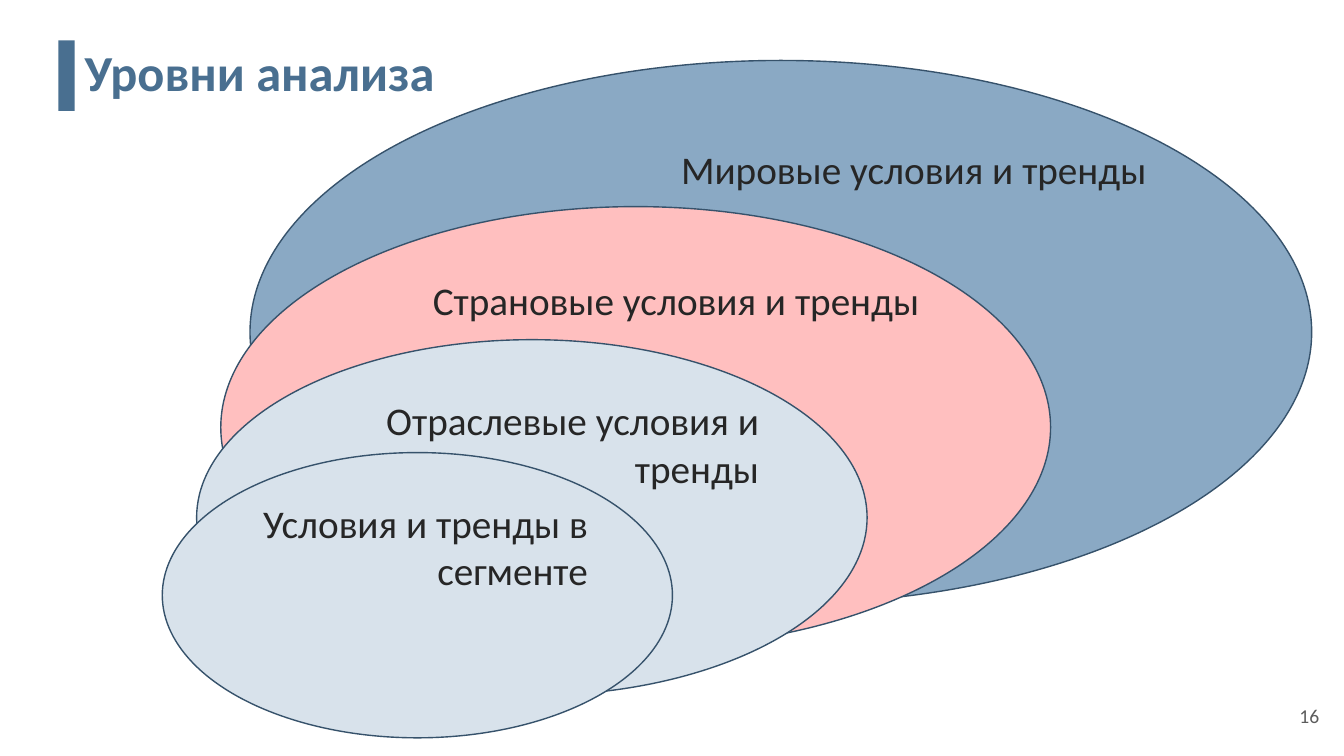
"""Builds the slide showing nested levels of market analysis."""
from dataclasses import dataclass

from pptx import Presentation
from pptx.dml.color import RGBColor
from pptx.enum.shapes import MSO_SHAPE
from pptx.enum.text import MSO_ANCHOR, PP_ALIGN
from pptx.util import Emu, Pt

EMU_PER_PX = 9144
ELLIPSE, RECT = MSO_SHAPE.OVAL, MSO_SHAPE.RECTANGLE
TOP, MIDDLE = MSO_ANCHOR.TOP, MSO_ANCHOR.MIDDLE
LEFT, RIGHT = PP_ALIGN.LEFT, PP_ALIGN.RIGHT
FONT = "Calibri"
COLORS = {
    "accent": "496F90",
    "outline": "36526B",
    "text": "262626",
    "number": "5C5C5C",
    "world": "8AA9C4",
    "country": "FFBFBF",
    "pale": "D8E2EB",
}


@dataclass(frozen=True)
class Box:
    left: int
    top: int
    width: int
    height: int


@dataclass(frozen=True)
class Level:
    text: str
    box: Box
    color: str


LEVELS = [
    Level("Мировые условия и тренды", Box(248, 60, 1053, 539), "world"),
    Level("Страновые условия и тренды", Box(219, 205, 823, 438), "country"),
    Level("Отраслевые условия и тренды", Box(195, 337, 665, 353), "pale"),
    Level("Условия и тренды в сегменте", Box(161, 449, 506, 283), "pale"),
]


def px(value: int) -> Emu:
    return Emu(value * EMU_PER_PX)


def rgb(name: str) -> RGBColor:
    return RGBColor.from_string(COLORS[name])


def place(box: Box) -> tuple[Emu, Emu, Emu, Emu]:
    return px(box.left), px(box.top), px(box.width), px(box.height)


def write(sp, text: str, size: int, color: str, align=LEFT, anchor=MIDDLE, bold: bool = False):
    tf = sp.text_frame
    tf.word_wrap = True
    tf.vertical_anchor = anchor
    p = tf.paragraphs[0]
    p.alignment = align
    r = p.add_run()
    r.text = text
    r.font.name = FONT
    r.font.size = Pt(size)
    r.font.bold = bold
    r.font.color.rgb = rgb(color)
    return p


def add_shape(s, kind, box: Box, fill: str):
    sp = s.shapes.add_shape(kind, *place(box))
    sp.shadow.inherit = False
    sp.fill.solid()
    sp.fill.fore_color.rgb = rgb(fill)
    sp.line.fill.background()
    return sp


def add_title(s, text: str, box: Box) -> None:
    sp = s.shapes.title
    sp.left, sp.top, sp.width, sp.height = place(box)
    p = write(sp, text, 36, "accent", bold=True)
    p.line_spacing = 0.9


def add_level(s, level: Level) -> None:
    sp = add_shape(s, ELLIPSE, level.box, level.color)
    sp.line.color.rgb = rgb("outline")
    sp.line.width = Pt(1)
    write(sp, level.text, 28, "text", RIGHT, TOP)


def main() -> None:
    prs = Presentation()
    prs.slide_width, prs.slide_height = px(1333), px(750)
    s = prs.slides.add_slide(prs.slide_layouts[5])
    add_shape(s, RECT, Box(58, 40, 16, 70), "accent")
    add_title(s, "Уровни анализа", Box(74, 40, 1203, 70))
    number = s.shapes.add_textbox(*place(Box(1279, 688, 44, 44)))
    write(number, "16", 14, "number")
    for level in LEVELS:
        add_level(s, level)
    prs.save("out.pptx")


if __name__ == "__main__":
    main()
